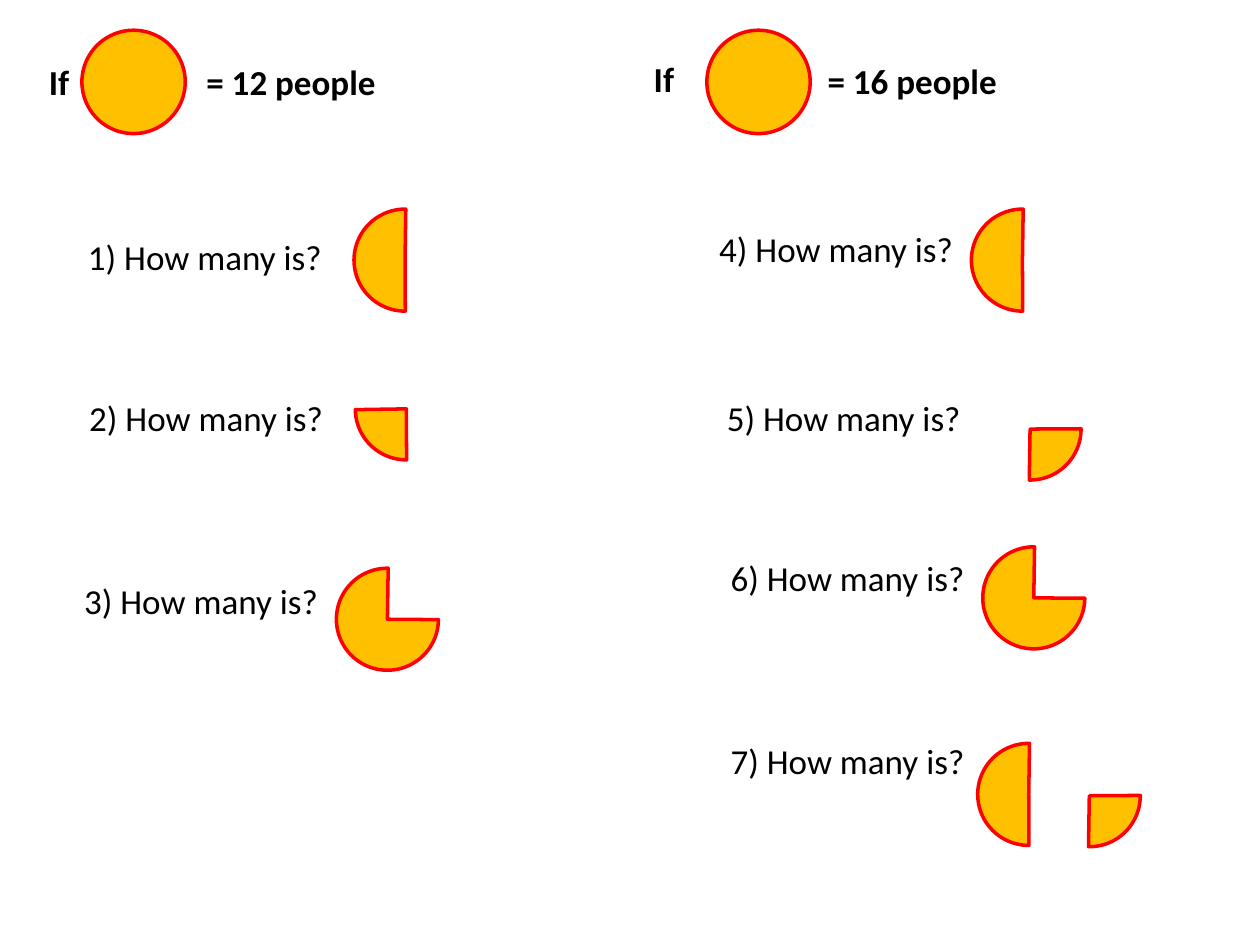
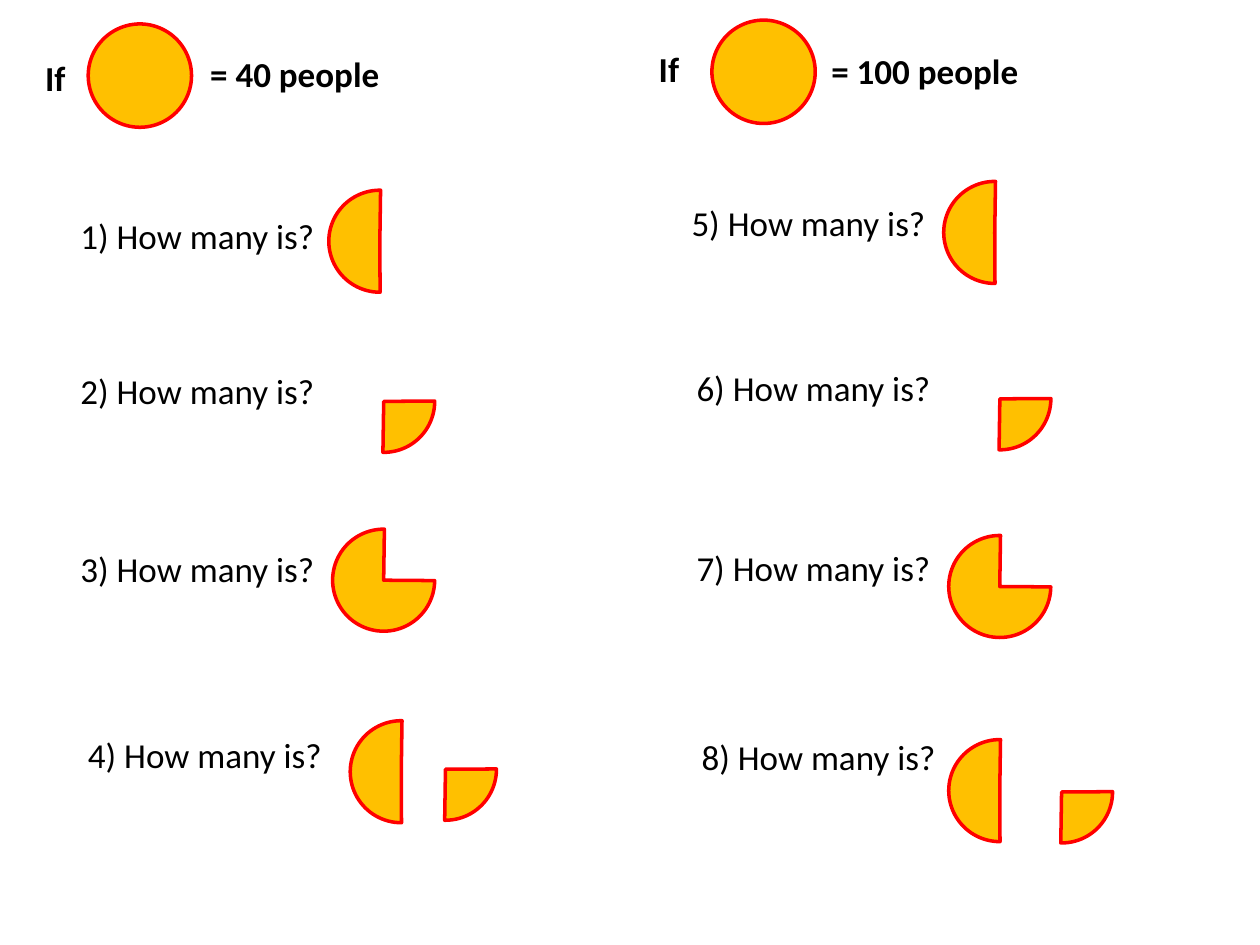
from dataclasses import dataclass

from pptx import Presentation
from pptx.dml.color import RGBColor
from pptx.enum import shapes, text
from pptx.shapes.group import GroupShape
from pptx.slide import Slide
from pptx.util import Inches, Pt

COLOURS = {"fill": "FFC000", "outline": "FF0000", "text": "000000"}
FONT = {"name": "Calibri", "size": Pt(20)}
FRAME = {"word_wrap": False, "auto_size": text.MSO_AUTO_SIZE.SHAPE_TO_FIT_TEXT}
LABEL_HEIGHT = 0.44
IF_WIDTH = 0.43
QUESTION_WIDTH = 2.07
WHOLE_SIZE = 0.82
SLICE_SIZE = 0.81
ADJUSTMENT_PER_DEGREE = 0.6

Point = tuple[float, float]


@dataclass(frozen=True)
class Fraction:
    start: float
    end: float
    rotation: float = 0


HALF = Fraction(89.72, 270.85)
LEFT_QUARTER = Fraction(89.72, 179.06)
RIGHT_QUARTER = Fraction(179.67, 270.85, 180)
THREE_QUARTERS = Fraction(0.47, 270.85)


@dataclass(frozen=True)
class Key:
    """The statement of how many people a whole circle stands for."""
    people: int
    if_at: Point
    whole_at: Point
    value_at: Point
    value_width: float = 1.56


@dataclass(frozen=True)
class Question:
    number: int
    at: Point
    slices: tuple[tuple[Fraction, Point], ...]


SHEETS: list[tuple[list[Key], list[Question]]] = [
    (
        [
            Key(12, (0.29, 0.43), (0.65, 0.24), (1.54, 0.43)),
            Key(16, (5.09, 0.41), (5.61, 0.24), (6.47, 0.42)),
        ],
        [
            Question(1, (0.6, 1.82), ((HALF, (2.81, 1.66)),)),
            Question(2, (0.61, 3.1), ((LEFT_QUARTER, (2.82, 2.84)),)),
            Question(3, (0.57, 4.55), ((THREE_QUARTERS, (2.67, 4.51)),)),
            Question(4, (5.61, 1.76), ((HALF, (7.71, 1.66)),)),
            Question(5, (5.67, 3.1), ((RIGHT_QUARTER, (7.77, 3)),)),
            Question(6, (5.7, 4.37), ((THREE_QUARTERS, (7.8, 4.34)),)),
            Question(7, (5.7, 5.82), ((RIGHT_QUARTER, (8.24, 5.91)), (HALF, (7.76, 5.9)))),
        ],
    ),
    (
        [
            Key(40, (0.26, 0.4), (0.7, 0.19), (1.57, 0.37)),
            Key(100, (5.13, 0.33), (5.65, 0.16), (6.5, 0.34), 1.7),
        ],
        [
            Question(1, (0.54, 1.65), ((HALF, (2.61, 1.51)),)),
            Question(2, (0.54, 2.88), ((RIGHT_QUARTER, (2.64, 2.78)),)),
            Question(3, (0.54, 4.3), ((THREE_QUARTERS, (2.64, 4.2)),)),
            Question(4, (0.6, 5.77), ((RIGHT_QUARTER, (3.13, 5.7)), (HALF, (2.78, 5.72)))),
            Question(5, (5.39, 1.55), ((HALF, (7.49, 1.44)),)),
            Question(6, (5.43, 2.86), ((RIGHT_QUARTER, (7.53, 2.76)),)),
            Question(7, (5.43, 4.29), ((THREE_QUARTERS, (7.53, 4.25)),)),
            Question(8, (5.47, 5.79), ((RIGHT_QUARTER, (8.02, 5.88)), (HALF, (7.53, 5.87)))),
        ],
    ),
]


def colour(name: str) -> RGBColor:
    return RGBColor.from_string(COLOURS[name])


def add_label(group: GroupShape, wording: str, at: Point, width: float, bold: bool = False) -> None:
    label = group.shapes.add_textbox(*map(Inches, (*at, width, LABEL_HEIGHT)))
    for name, value in FRAME.items():
        setattr(label.text_frame, name, value)
    run = label.text_frame.paragraphs[0].add_run()
    run.text = wording
    for name, value in {**FONT, "bold": bold}.items():
        setattr(run.font, name, value)
    run.font.color.rgb = colour("text")


def add_disc(group: GroupShape, at: Point, size: float, fraction: Fraction | None = None) -> None:
    """Draw a whole circle, or only the given fraction of it."""
    kind = shapes.MSO_SHAPE.PIE if fraction else shapes.MSO_SHAPE.OVAL
    disc = group.shapes.add_shape(kind, *map(Inches, (*at, size, size)))
    if fraction:
        for index, angle in enumerate((fraction.start, fraction.end)):
            disc.adjustments[index] = angle * ADJUSTMENT_PER_DEGREE
        disc.rotation = fraction.rotation
    disc.shadow.inherit = False
    disc.fill.solid()
    disc.fill.fore_color.rgb = colour("fill")
    disc.line.color.rgb = colour("outline")
    disc.line.width = Pt(2)


def add_key(slide: Slide, key: Key) -> None:
    group = slide.shapes.add_group_shape()
    add_label(group, f"= {key.people} people", key.value_at, key.value_width, bold=True)
    add_label(group, "If", key.if_at, IF_WIDTH, bold=True)
    add_disc(group, key.whole_at, WHOLE_SIZE)


def add_question(slide: Slide, question: Question) -> None:
    group = slide.shapes.add_group_shape()
    add_label(group, f"{question.number}) How many is?", question.at, QUESTION_WIDTH)
    for fraction, at in question.slices:
        add_disc(group, at, SLICE_SIZE, fraction)


def main() -> None:
    deck = Presentation()
    deck.slide_width, deck.slide_height = Inches(10), Inches(7.5)
    blank = deck.slide_layouts.get_by_name("Blank")
    for keys, questions in SHEETS:
        slide = deck.slides.add_slide(blank)
        for key in keys:
            add_key(slide, key)
        for question in questions:
            add_question(slide, question)
    deck.save("out.pptx")


if __name__ == "__main__":
    main()
